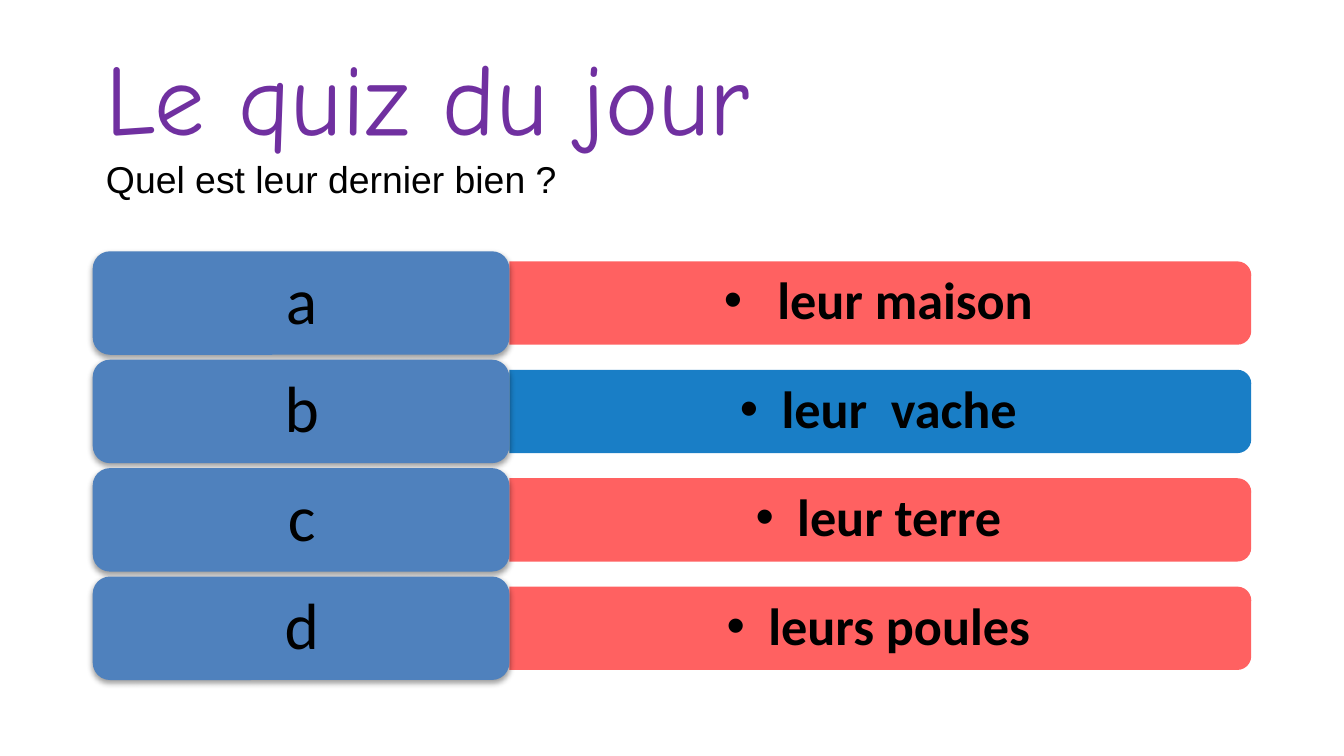
"""Build a quiz slide with four lettered answers."""
from lxml import etree
from pptx import Presentation
from pptx import util as u
from pptx.dml.color import RGBColor
from pptx.enum import shapes, text
from pptx.oxml.ns import qn

COLORS = {"title": "7030A0", "text": "000000", "label": "4F81BD",
          "red": "FF5050", "blue": "0070C0"}
TITLE = "Le quiz du jour"
QUESTION = "Quel est leur dernier bien ?"
ANSWERS = [("a", " leur maison", "red"), ("b", "leur  vache", "blue"),
           ("c", "leur terre", "red"), ("d", "leurs poules", "red")]

LEFT, TOP, LAST_TOP = 0.69, 1.87, 4.29
PITCH = (LAST_TOP - TOP) / (len(ANSWERS) - 1)
LABEL_W, LABEL_H = 3.1, 0.77
BAR_W, BAR_H = 5.52, 0.62
BAR_LEFT = LEFT + LABEL_W


def add_shape(s, kind, box, color):
    sp = s.shapes.add_shape(kind, *map(u.Inches, box))
    sp.shadow.inherit = False
    sp.fill.solid()
    sp.fill.fore_color.rgb = RGBColor.from_string(COLORS[color])
    sp.line.fill.background()
    return sp


def add_text(s, box, inset_x, inset_y):
    tf = s.shapes.add_textbox(*map(u.Inches, box)).text_frame
    tf.word_wrap = True
    tf.vertical_anchor = text.MSO_ANCHOR.MIDDLE
    tf.margin_left = tf.margin_right = u.Inches(inset_x)
    tf.margin_top = tf.margin_bottom = u.Inches(inset_y)
    return tf.paragraphs[0]


def add_run(p, words, size, font="Calibri", color="text", bold=False):
    r = p.add_run()
    r.text = words
    r.font.size, r.font.name, r.font.bold = u.Pt(size), font, bold
    r.font.color.rgb = RGBColor.from_string(COLORS[color])


def add_alpha(clr, percent):
    etree.SubElement(clr, qn("a:alpha")).set("val", str(percent * 1000))


def add_shadow(sp):
    effects = sp._element.spPr.find(qn("a:effectLst"))
    shadow = etree.SubElement(effects, qn("a:outerShdw"), blurRad=str(u.Pt(3.1)),
                              dist=str(u.Pt(1.6)), dir="5400000", rotWithShape="0")
    add_alpha(etree.SubElement(shadow, qn("a:srgbClr"), val="000000"), 38)


def add_bullet(p):
    pPr = p._p.get_or_add_pPr()
    pPr.set("marL", str(u.Inches(0.31)))
    pPr.set("indent", str(-u.Inches(0.31)))
    etree.SubElement(pPr, qn("a:buFont"), typeface="Arial")
    etree.SubElement(pPr, qn("a:buChar"), char="•")


def add_answer(s, top, letter, answer, color):
    middle = top + LABEL_H / 2
    bar = add_shape(s, shapes.MSO_SHAPE.ROUND_2_SAME_RECTANGLE,
                    (BAR_LEFT + (BAR_W - BAR_H) / 2, middle - BAR_W / 2, BAR_H, BAR_W), color)
    bar.rotation = 90
    add_alpha(bar._element.spPr.find(qn("a:solidFill"))[0], 90)
    p = add_text(s, (BAR_LEFT, middle - 0.28, 5.49, 0.56), 0.12, 0.06)
    p.alignment, p.level, p.line_spacing = text.PP_ALIGN.CENTER, 1, 0.9
    add_bullet(p)
    add_run(p, answer, 28, bold=True)

    add_shadow(add_shape(s, shapes.MSO_SHAPE.ROUNDED_RECTANGLE,
                         (LEFT, top, LABEL_W, LABEL_H), "label"))
    p = add_text(s, (LEFT + 0.04, top + 0.04, 3.03, 0.69), 0.15, 0.07)
    p.alignment, p.line_spacing = text.PP_ALIGN.CENTER, 0.9
    add_run(p, letter, 35)


def main():
    prs = Presentation()
    prs.slide_width = u.Inches(10)
    prs.slide_height = prs.slide_width * 9 // 16
    s = prs.slides.add_slide(prs.slide_layouts[6])
    p = add_text(s, (LEFT, 0.2, 8.62, 1.35), 0.1, 0.05)
    add_run(p, TITLE, 54, "Comic Neue", "title")
    p.add_line_break()
    add_run(p, QUESTION, 20, "Arial")
    for i, answer in enumerate(ANSWERS):
        add_answer(s, TOP + i * PITCH, *answer)
    prs.save("out.pptx")


if __name__ == "__main__":
    main()
